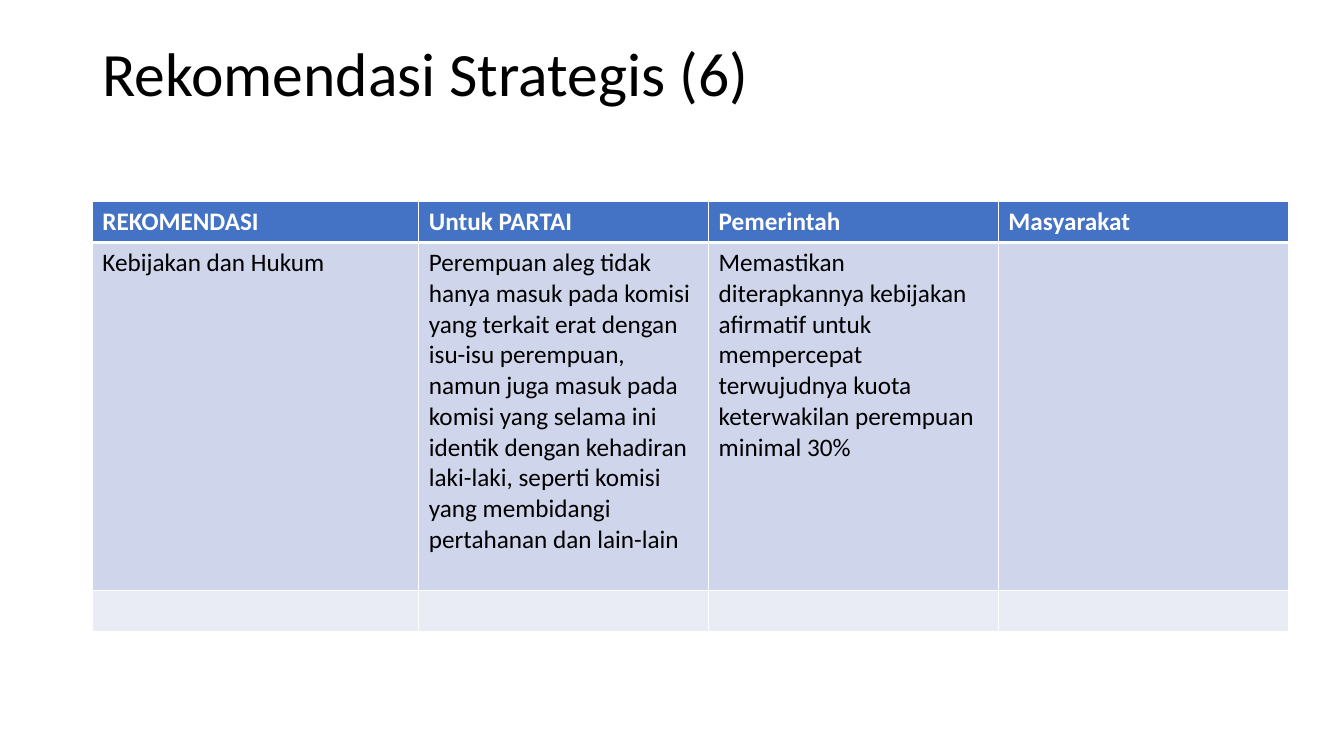
from dataclasses import dataclass

from lxml.etree import SubElement as Sub
from pptx import Presentation
from pptx.dml.color import RGBColor as Rgb
from pptx.enum.text import MSO_ANCHOR as Anchor, PP_ALIGN as Align
from pptx.oxml.ns import qn
from pptx.slide import Slide
from pptx.table import _Cell as Cell
from pptx.text.text import TextFrame as Frame
from pptx.util import Pt

FONT = "Calibri"
WHITE = "FFFFFF"
BLACK = "000000"
WIDTHS = (233.2, 207, 207, 207)


@dataclass(frozen=True)
class Row:
    height: float
    fill: str
    texts: tuple[str, ...]
    color: str = BLACK
    bold: bool = False
    top: float = 1
    base: float = 1


ROWS = (
    Row(29.2, "4472C4",
        ("REKOMENDASI", "Untuk PARTAI", "Pemerintah", "Masyarakat"),
        color=WHITE, bold=True, base=3),
    Row(248.8, "CFD5EA",
        ("Kebijakan dan Hukum",
         "Perempuan aleg tidak hanya masuk pada komisi yang terkait erat "
         "dengan isu-isu perempuan, namun juga masuk pada komisi yang selama "
         "ini identik dengan kehadiran laki-laki, seperti komisi yang "
         "membidangi pertahanan dan lain-lain",
         "Memastikan diterapkannya kebijakan afirmatif untuk mempercepat "
         "terwujudnya kuota keterwakilan perempuan minimal 30%",
         ""),
        top=3),
    Row(29.2, "E9EBF5", ("",) * len(WIDTHS)),
)


def paint(code: str) -> Rgb:
    return Rgb.from_string(code)


def write(frame: Frame, text: str, *, size: float = 18, color: str = BLACK,
          bold: bool = False, space: float = 1) -> None:
    frame.word_wrap = True
    frame.vertical_anchor = Anchor.TOP
    para = frame.paragraphs[0]
    para.alignment = Align.LEFT
    para.line_spacing = space
    if not text:
        return
    run = para.add_run()
    run.text = text
    font = run.font
    font.name, font.size, font.bold = FONT, Pt(size), bold
    font.color.rgb = paint(color)


def edge(cell: Cell, top: float, base: float) -> None:
    props = cell._tc.get_or_add_tcPr()
    for side, width in (("L", 1), ("R", 1), ("T", top), ("B", base)):
        line = Sub(props, qn(f"a:ln{side}"), w=str(int(Pt(width))))
        fill = Sub(line, qn("a:solidFill"))
        Sub(fill, qn("a:srgbClr"), val=WHITE)


def add_title(slide: Slide) -> None:
    box = slide.shapes.add_textbox(Pt(66), Pt(27.5), Pt(828), Pt(104.4))
    write(box.text_frame, "Rekomendasi Strategis (6)", size=44, space=0.9)


def add_grid(slide: Slide) -> None:
    high = sum(row.height for row in ROWS)
    table = slide.shapes.add_table(
        len(ROWS), len(WIDTHS), Pt(66), Pt(144), Pt(sum(WIDTHS)), Pt(high)
    ).table
    for col, width in zip(table.columns, WIDTHS):
        col.width = Pt(width)
    for line, row in zip(table.rows, ROWS):
        line.height = Pt(row.height)
        for cell, text in zip(line.cells, row.texts):
            edge(cell, row.top, row.base)
            cell.fill.solid()
            cell.fill.fore_color.rgb = paint(row.fill)
            write(cell.text_frame, text, color=row.color, bold=row.bold)


def main() -> None:
    """Build the slide of strategic recommendations."""
    deck = Presentation()
    deck.slide_width, deck.slide_height = Pt(960), Pt(540)
    slide = deck.slides.add_slide(deck.slide_layouts[6])
    add_title(slide)
    add_grid(slide)
    deck.save("out.pptx")


if __name__ == "__main__":
    main()
